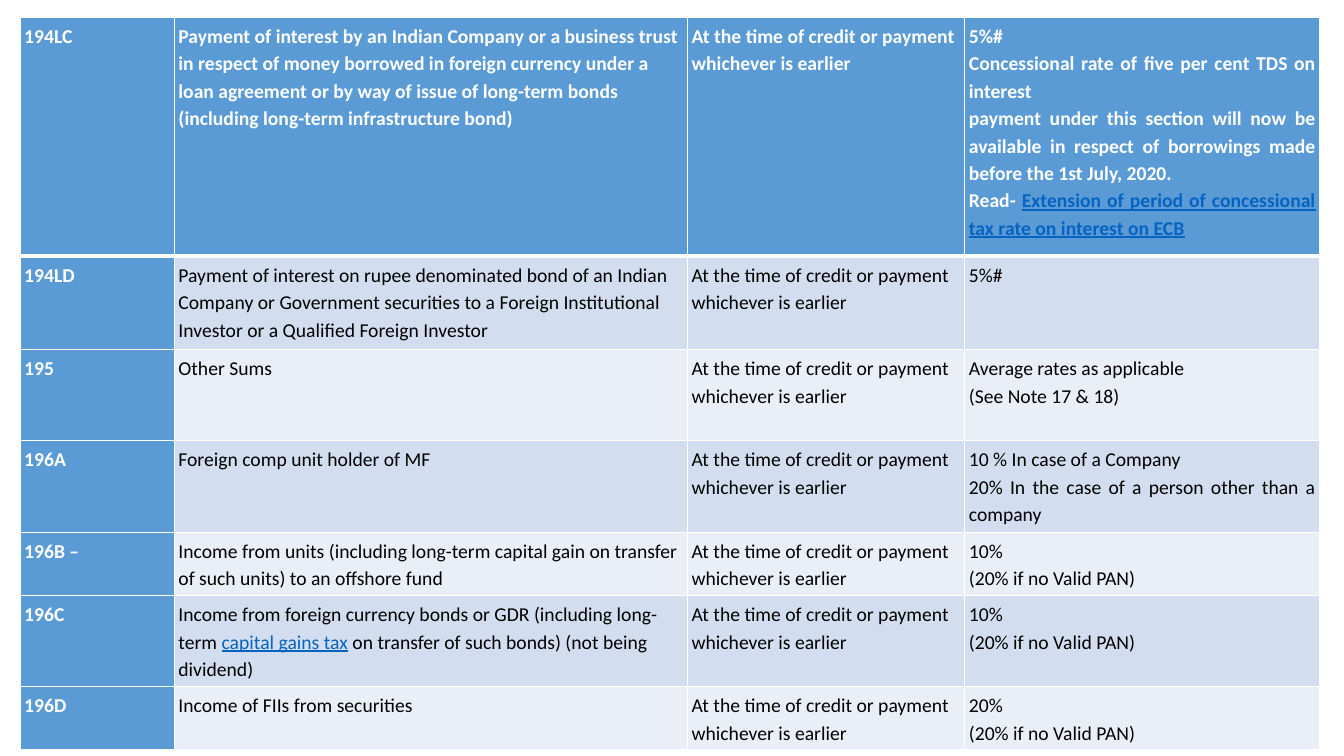
import lxml.etree
import pptx
import pptx.dml.color
import pptx.enum.text
import pptx.oxml.ns
import pptx.util
from dataclasses import dataclass

EMU_PER_PX = 9144  # 100 px to the inch


@dataclass(frozen=True)
class Theme:
    font: str = "Calibri"
    text_size: int = 14
    line_spacing: float = 1.15
    head: str = "5B9BD5"
    bands: tuple = ("D2DEEF", "EAEFF7")
    head_text: str = "FFFFFF"
    body_text: str = "000000"
    link: str = "0563C1"
    rule: str = "FFFFFF"
    thin: int = 1
    thick: int = 3


THEME = Theme()
COLUMN_WIDTHS = [153, 509, 275, 352]
ROW_HEIGHTS = [237, 93, 90, 91, 63, 90, 63]
CELL_MARGIN = 4
WHEN = "At the time of credit or payment whichever is earlier"
NO_PAN = "(20% if no Valid PAN)"

# Section, nature of payment, time of deduction, rate paragraphs.
# A paragraph is a list of spans; every second span is a link.
SECTIONS = [
    ("194LC",
     ["Payment of interest by an Indian Company or a business trust in respect of "
      "money borrowed in foreign currency under a loan agreement or by way of issue "
      "of long-term bonds (including long-term infrastructure bond)"],
     [["5%#"],
      ["Concessional rate of five per cent TDS on interest\n"
       "payment under this section will now be available in respect of borrowings "
       "made before the 1st July, 2020."],
      ["Read- ", "Extension of period of concessional tax rate on interest on ECB"]]),
    ("194LD",
     ["Payment of interest on rupee denominated bond of an Indian Company or "
      "Government securities to a Foreign Institutional Investor or a Qualified "
      "Foreign Investor"],
     [["5%#"]]),
    ("195", ["Other Sums"],
     [["Average rates as applicable"], ["(See Note 17 & 18)"]]),
    ("196A", ["Foreign comp unit holder of MF"],
     [["10 % In case of a Company"],
      ["20% In the case of a person other than a company"]]),
    ("196B –",
     ["Income from units (including long-term capital gain on transfer of such "
      "units) to an offshore fund"],
     [["10%"], [NO_PAN]]),
    ("196C",
     ["Income from foreign currency bonds or GDR (including long-term ",
      "capital gains tax",
      " on transfer of such bonds) (not being dividend)"],
     [["10%"], [NO_PAN]]),
    ("196D", ["Income of FIIs from securities"],
     [["20%"], [NO_PAN]]),
]


def px(length):
    return pptx.util.Emu(length * EMU_PER_PX)


def rgb(value):
    return pptx.dml.color.RGBColor.from_string(value)


def set_borders(cell, top, bottom):
    """Rule all four sides; the lines must come before the cell's fill."""
    properties = cell._tc.get_or_add_tcPr()
    widths = {"a:lnL": THEME.thin, "a:lnR": THEME.thin, "a:lnT": top, "a:lnB": bottom}
    for position, (tag, width) in enumerate(widths.items()):
        line = lxml.etree.Element(pptx.oxml.ns.qn(tag), w=str(pptx.util.Pt(width)))
        fill = lxml.etree.SubElement(line, pptx.oxml.ns.qn("a:solidFill"))
        lxml.etree.SubElement(fill, pptx.oxml.ns.qn("a:srgbClr"), val=THEME.rule)
        properties.insert(position, line)


def write_paragraph(para, spans, color, bold):
    para.line_spacing = THEME.line_spacing
    para.font.name = THEME.font
    para.font.size = pptx.util.Pt(THEME.text_size)
    para.font.bold = bold
    para.font.color.rgb = rgb(color)
    for index, text in enumerate(spans):
        for number, line in enumerate(text.split("\n")):
            if number:
                para.add_line_break()
            span = para.add_run()
            span.text = line
            if index % 2:
                span.font.underline = True
                span.font.color.rgb = rgb(THEME.link)


def fill_cell(cell, paragraphs, fill, color, bold):
    cell.margin_left = cell.margin_right = px(CELL_MARGIN)
    cell.margin_top = cell.margin_bottom = px(CELL_MARGIN)
    cell.fill.solid()
    cell.fill.fore_color.rgb = rgb(fill)
    frame = cell.text_frame
    for index, spans in enumerate(paragraphs):
        para = frame.add_paragraph() if index else frame.paragraphs[0]
        if index:
            para.alignment = pptx.enum.text.PP_ALIGN.JUSTIFY
        write_paragraph(para, spans, color, bold)


def add_rate_table(page, left, top):
    frame = page.shapes.add_table(
        len(SECTIONS), len(COLUMN_WIDTHS), px(left), px(top),
        px(sum(COLUMN_WIDTHS)), px(sum(ROW_HEIGHTS)))
    table = frame.table
    table.first_col = True
    for column, width in zip(table.columns, COLUMN_WIDTHS):
        column.width = px(width)
    for row, height in zip(table.rows, ROW_HEIGHTS):
        row.height = px(height)

    for r, (section, nature, rates) in enumerate(SECTIONS):
        # The heavy rule lies between the first row and the second
        top_rule = THEME.thick if r == 1 else THEME.thin
        bottom_rule = THEME.thick if r == 0 else THEME.thin
        for c, paragraphs in enumerate([[[section]], [nature], [[WHEN]], rates]):
            is_head = r == 0 or c == 0
            fill = THEME.head if is_head else THEME.bands[(r - 1) % 2]
            color = THEME.head_text if is_head else THEME.body_text
            cell = table.cell(r, c)
            fill_cell(cell, paragraphs, fill, color, is_head)
            set_borders(cell, top_rule, bottom_rule)


def main():
    deck = pptx.Presentation()
    deck.slide_width, deck.slide_height = px(1333), px(750)
    page = deck.slides.add_slide(deck.slide_layouts[6])
    add_rate_table(page, left=20, top=17)
    deck.save("out.pptx")


if __name__ == "__main__":
    main()
